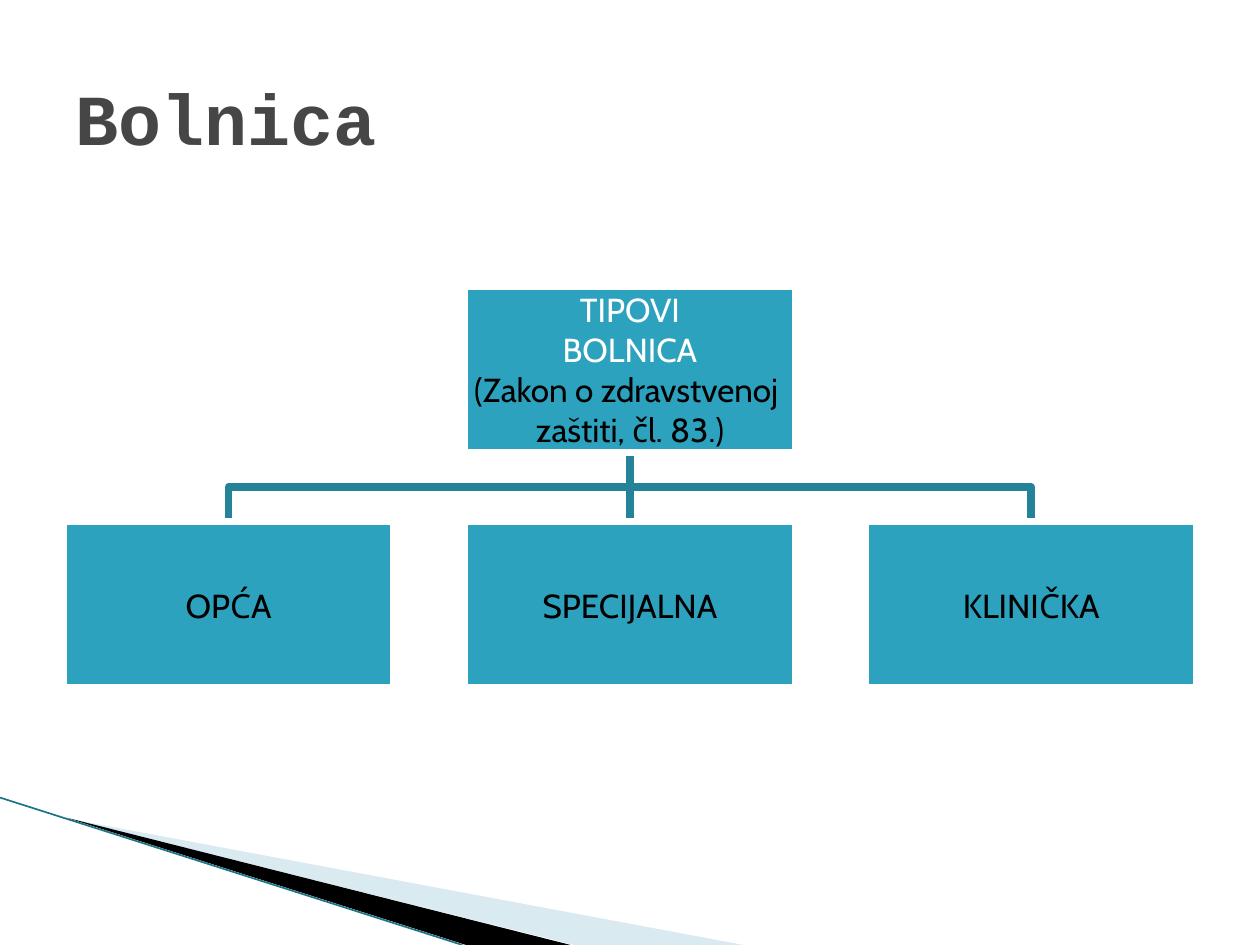
from dataclasses import dataclass

from lxml.etree import SubElement
from pptx import Presentation
from pptx.dml.color import RGBColor
from pptx.enum.shapes import MSO_CONNECTOR as Link, MSO_SHAPE as Preset
from pptx.enum.text import MSO_ANCHOR as Anchor, PP_ALIGN as Align
from pptx.oxml.ns import qn
from pptx.util import Inches, Pt

WHITE = RGBColor(0xFF, 0xFF, 0xFF)
BLACK = RGBColor(0, 0, 0)
GREY = RGBColor(0x46, 0x46, 0x46)
TEAL = RGBColor(0x2D, 0xA2, 0xBF)
DARK_TEAL = RGBColor(0x24, 0x82, 0x99)
EDGE_TEAL = RGBColor(0x1B, 0x75, 0x87)
PALE_BLUE = RGBColor(0xA0, 0xCB, 0xDC)

# Chart grid, in inches
LEFT, TOP = 0.5, 2.27
BOX_WIDTH, BOX_HEIGHT = 2.63, 1.32
COLUMN_STEP, ROW_STEP = 3.185, 1.87
LINE_WIDTH = 4.33


@dataclass
class Node:
    column: int
    row: int
    lines: list[tuple[str, RGBColor]]

    @property
    def left(self) -> float:
        return LEFT + self.column * COLUMN_STEP

    @property
    def top(self) -> float:
        return TOP + self.row * ROW_STEP

    @property
    def center(self) -> float:
        return self.left + BOX_WIDTH / 2


@dataclass
class Wedge:
    points: list[tuple[float, float]]
    color: RGBColor
    opacity: int


ROOT = Node(1, 0, [("TIPOVI", WHITE), ("BOLNICA", WHITE),
                   ("(Zakon o zdravstvenoj ", BLACK), ("zaštiti, čl. 83.)", BLACK)])
TYPES = [Node(column, 1, [(name, BLACK)])
         for column, name in enumerate(["OPĆA", "SPECIJALNA", "KLINIČKA"])]
WEDGES = [
    Wedge([(0.55, 6.5), (5.9, 7.5), (4.56, 7.5)], PALE_BLUE, 40),
    Wedge([(0.53, 6.49), (4.53, 7.5), (3.7, 7.5)], BLACK, 100),
]


def apply(target, values: dict) -> None:
    for name, value in values.items():
        setattr(target, name, value)


def set_line(shape, color: RGBColor, width: float) -> None:
    shape.line.color.rgb = color
    shape.line.width = Pt(width)


def draw_path(page, points: list[tuple[float, float]], close: bool):
    corners = [(Inches(x), Inches(y)) for x, y in points]
    builder = page.shapes.build_freeform(*corners[0])
    builder.add_line_segments(corners[1:], close=close)
    shape = builder.convert_to_shape()
    shape.shadow.inherit = False
    return shape


def draw_wedge(page, wedge: Wedge) -> None:
    shape = draw_path(page, wedge.points, True)
    shape.fill.solid()
    shape.fill.fore_color.rgb = wedge.color
    shape.line.fill.background()
    if wedge.opacity < 100:
        color = shape.fill._xPr.find(qn("a:solidFill"))[0]
        SubElement(color, qn("a:alpha"), val=str(wedge.opacity * 1000))


def draw_straight(page, start: tuple, end: tuple, color: RGBColor, width: float):
    line = page.shapes.add_connector(
        Link.STRAIGHT, *(Inches(value) for value in start + end))
    set_line(line, color, width)
    SubElement(line._element.spPr, qn("a:effectLst"))
    return line


def draw_elbow(page, parent: Node, child: Node) -> None:
    bottom = parent.top + BOX_HEIGHT
    middle = (bottom + child.top) / 2
    shape = draw_path(page, [(parent.center, bottom), (parent.center, middle),
                             (child.center, middle), (child.center, child.top)], False)
    shape.fill.background()
    set_line(shape, DARK_TEAL, LINE_WIDTH)


def draw_node(page, node: Node):
    box = page.shapes.add_shape(
        Preset.RECTANGLE, Inches(node.left), Inches(node.top),
        Inches(BOX_WIDTH), Inches(BOX_HEIGHT))
    box.shadow.inherit = False
    box.fill.solid()
    box.fill.fore_color.rgb = TEAL
    set_line(box, WHITE, LINE_WIDTH)
    frame = box.text_frame
    margins = {f"margin_{side}": Inches(0.01)
               for side in ("left", "top", "right", "bottom")}
    apply(frame, {"word_wrap": True, "vertical_anchor": Anchor.MIDDLE, **margins})
    for index, (text, color) in enumerate(node.lines):
        para = frame.add_paragraph() if index else frame.paragraphs[0]
        para.alignment = Align.CENTER
        span = para.add_run()
        span.text = text
        apply(span.font, {"name": "Cabin", "size": Pt(19)})
        span.font.color.rgb = color
    return box


def main() -> None:
    deck = Presentation()
    apply(deck, {"slide_width": Inches(10), "slide_height": Inches(7.5)})
    page = deck.slides.add_slide(deck.slide_layouts[5])

    # Corner decoration
    for wedge in WEDGES:
        draw_wedge(page, wedge)
    draw_straight(page, (0, 6.33), (3.67, 7.5), EDGE_TEAL, 0.95)

    # Title
    title = page.shapes.title
    apply(title, {"left": Inches(0.5), "top": Inches(0.3),
                  "width": Inches(9), "height": Inches(1.25)})
    title.text_frame.vertical_anchor = Anchor.MIDDLE
    para = title.text_frame.paragraphs[0]
    para.alignment = Align.LEFT
    span = para.add_run()
    span.text = "Bolnica"
    apply(span.font, {"name": "Courier New", "size": Pt(41), "bold": True})
    span.font.color.rgb = GREY

    # Hospital types: links lie behind the boxes
    first, second, third = TYPES
    draw_elbow(page, ROOT, third)
    stem = draw_straight(page, (ROOT.center, ROOT.top + BOX_HEIGHT),
                         (second.center, second.top), DARK_TEAL, LINE_WIDTH)
    draw_elbow(page, ROOT, first)
    boxes = [draw_node(page, node) for node in [ROOT, *TYPES]]
    stem.begin_connect(boxes[0], 2)
    stem.end_connect(boxes[2], 0)

    deck.save("out.pptx")


if __name__ == "__main__":
    main()
